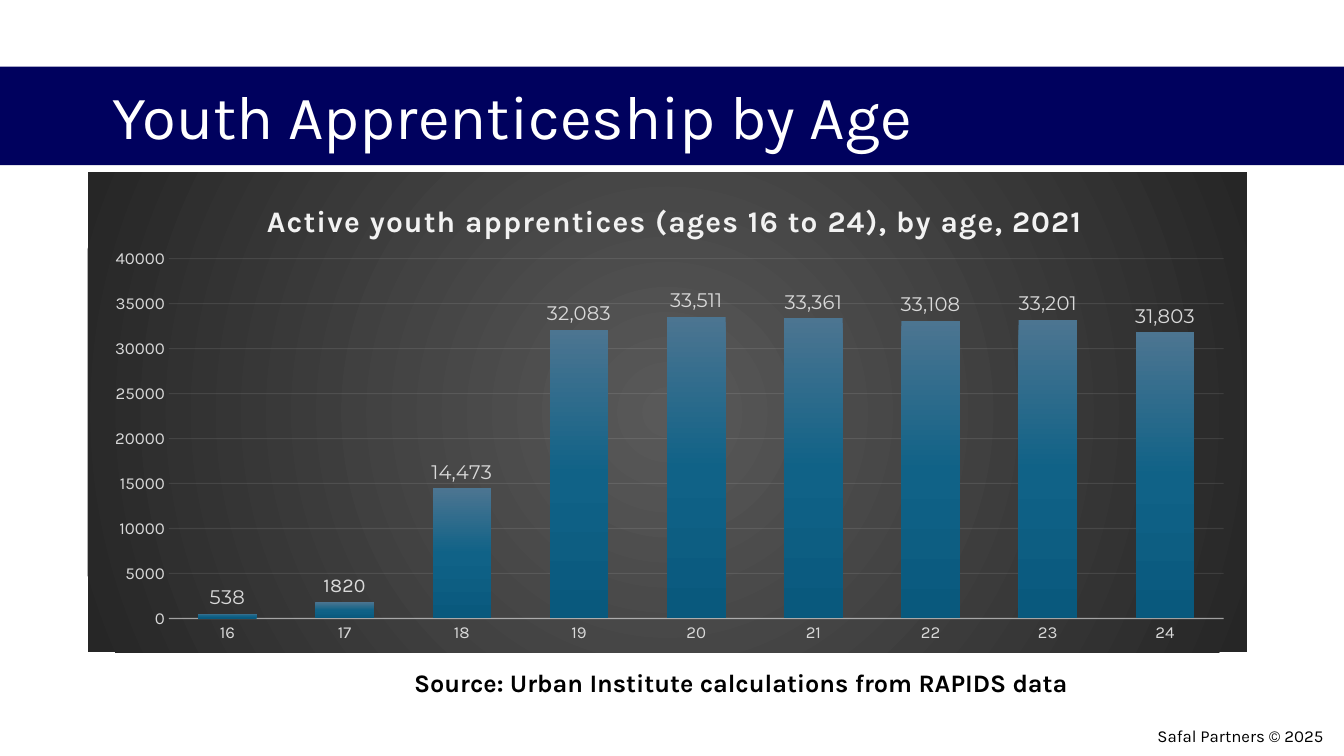
from lxml.etree import fromstring
from pptx import Presentation
from pptx.chart.data import CategoryChartData
from pptx.dml.color import RGBColor
from pptx.enum.chart import XL_CHART_TYPE, XL_LABEL_POSITION, XL_TICK_MARK
from pptx.enum.shapes import MSO_SHAPE
from pptx.enum.text import MSO_ANCHOR, PP_ALIGN
from pptx.oxml.ns import nsdecls, qn
from pptx.util import Inches, Pt

COLUMNS, ROWS = 160, 90
SLIDE_WIDTH, SLIDE_HEIGHT = Inches(13.33), Inches(7.5)
APPRENTICES_BY_AGE = {
    "16": 538, "17": 1820, "18": 14473, "19": 32083, "20": 33511,
    "21": 33361, "22": 33108, "23": 33201, "24": 31803,
}


def grid(column, row, columns, rows):
    """Turn grid units into left, top, width and height."""
    return (
        int(SLIDE_WIDTH * column / COLUMNS), int(SLIDE_HEIGHT * row / ROWS),
        int(SLIDE_WIDTH * columns / COLUMNS), int(SLIDE_HEIGHT * rows / ROWS),
    )


def color(hex_text):
    """Return the colour of a hex string."""
    return RGBColor.from_string(hex_text)


def format_font(font, size, hex_text, name="Karla", bold=False):
    """Set the look of a font."""
    font.name, font.size, font.bold = name, Pt(size), bold
    font.color.rgb = color(hex_text)


def write_text(frame, text, size=12, hex_text="000000", bold=False,
               align=PP_ALIGN.LEFT, anchor=MSO_ANCHOR.TOP, line_spacing=1.0):
    """Write one formatted paragraph in a text frame and return its run."""
    frame.word_wrap = True
    frame.vertical_anchor = anchor
    paragraph = frame.paragraphs[0]
    paragraph.alignment, paragraph.line_spacing = align, line_spacing
    run = paragraph.add_run()
    run.text = text
    format_font(run.font, size, hex_text, bold=bold)
    return run


def add_band(slide, place, fill):
    """Add a plain filled rectangle."""
    band = slide.shapes.add_shape(MSO_SHAPE.RECTANGLE, *place)
    band.shadow.inherit = False
    band.fill.solid()
    band.fill.fore_color.rgb = color(fill)
    band.line.fill.background()


def add_text(slide, place, text, **text_format):
    """Add a text box."""
    write_text(slide.shapes.add_textbox(*place).text_frame, text, **text_format)


def set_title(slide, place, text, **text_format):
    """Move the title placeholder and fill it."""
    title = slide.shapes.title
    title.left, title.top, title.width, title.height = place
    write_text(title.text_frame, text, **text_format)


def gradient(stops, direction):
    """Build a gradient fill from percentages and hex colours."""
    stop_xml = "".join(
        f'<a:gs pos="{percent * 1000}"><a:srgbClr val="{value}"/></a:gs>'
        for percent, value in stops
    )
    return fromstring(
        f'<a:gradFill {nsdecls("a")} rotWithShape="1">'
        f"<a:gsLst>{stop_xml}</a:gsLst>{direction}</a:gradFill>"
    )


def manual_layout(**settings):
    """Build a manual chart layout from its settings."""
    parts = "".join(f'<c:{key} val="{value}"/>' for key, value in settings.items())
    return fromstring(
        f'<c:layout {nsdecls("c")}><c:manualLayout>{parts}</c:manualLayout></c:layout>'
    )


def replace_layout(parent, layout, index):
    """Swap the layout of a chart part."""
    for old_layout in parent.findall(qn("c:layout")):
        parent.remove(old_layout)
    parent.insert(index, layout)


def format_line(line, width, hex_text, opacity):
    """Give a line its width, colour and opacity percentage."""
    line.width = Pt(width)
    line.color.rgb = color(hex_text)
    rgb = line._get_or_add_ln().find(".//" + qn("a:srgbClr"))
    rgb.append(fromstring(f'<a:alpha {nsdecls("a")} val="{opacity * 1000}"/>'))


def format_axes(chart):
    """Format both axes and the gridlines."""
    for axis in (chart.category_axis, chart.value_axis):
        axis.major_tick_mark = axis.minor_tick_mark = XL_TICK_MARK.NONE
        format_font(axis.tick_labels.font, 12, "D9D9D9")
    format_line(chart.category_axis.format.line, 1, "F2F2F2", 54)
    values = chart.value_axis
    values.minimum_scale, values.maximum_scale, values.major_unit = 0, 40000, 5000
    values.tick_labels.number_format = "0"
    values.tick_labels.number_format_is_linked = False
    values.format.line.fill.background()
    values.has_major_gridlines = True
    format_line(values.major_gridlines.format.line, 0.75, "F2F2F2", 10)


def format_columns(plot):
    """Format the columns and their labels."""
    plot.vary_by_categories = False
    plot.gap_width, plot.overlap = 100, -24
    series = plot.series[0]
    series._element.get_or_add_spPr().append(gradient(
        [(0, "4C7591"), (50, "106287"), (100, "09597D")],
        '<a:lin ang="5400000" scaled="0"/>',
    ))
    labels = series.data_labels
    labels.show_value = True
    labels.number_format, labels.number_format_is_linked = "#,##0", False
    labels.position = XL_LABEL_POSITION.OUTSIDE_END
    format_font(labels.font, 14, "D9D9D9", name="Montserrat")
    age_17 = series.points[1].data_label
    write_text(age_17.text_frame, "1820", size=14, hex_text="D9D9D9",
               align=PP_ALIGN.CENTER)
    age_17.position = XL_LABEL_POSITION.OUTSIDE_END


def add_column_chart(slide, place, heading, values):
    """Add the column chart on its dark panel."""
    data = CategoryChartData(number_format="#,##0")
    data.categories = list(values)
    data.add_series("Series 1", list(values.values()))
    chart = slide.shapes.add_chart(XL_CHART_TYPE.COLUMN_CLUSTERED, *place, data).chart
    format_font(chart.font, 10, "000000")
    chart.has_legend = False
    chart.has_title = True
    run = write_text(chart.chart_title.text_frame, heading, size=21.3,
                     hex_text="F2F2F2", bold=True, align=PP_ALIGN.CENTER)
    run.font._element.set("spc", "100")
    chart.chart_title.include_in_layout = False
    replace_layout(chart.chart_title._element,
                   manual_layout(xMode="edge", yMode="edge", x=0.15, y=0.05), 1)
    format_axes(chart)
    format_columns(chart.plots[0])
    chart_space = chart._chartSpace
    replace_layout(
        chart_space.find(".//" + qn("c:plotArea")),
        manual_layout(layoutTarget="inner", xMode="edge", yMode="edge",
                      x=0.07, y=0.18, w=0.91, h=0.75), 0)
    panel = fromstring(f'<c:spPr {nsdecls("c", "a")}><a:ln><a:noFill/></a:ln></c:spPr>')
    panel.insert(0, gradient(
        [(0, "595959"), (100, "262626")],
        '<a:path path="circle">'
        '<a:fillToRect l="50000" t="50000" r="50000" b="50000"/></a:path>',
    ))
    chart_space.find(qn("c:chart")).addnext(panel)


def main():
    """Build and save the slide."""
    presentation = Presentation()
    presentation.slide_width, presentation.slide_height = SLIDE_WIDTH, SLIDE_HEIGHT
    slide = presentation.slides.add_slide(presentation.slide_layouts[5])
    add_band(slide, grid(0, 7.92, COLUMNS, 11.76), "00015E")
    title = slide.shapes.title._element
    title.getparent().append(title)
    set_title(slide, grid(12.24, 5.52, 147.76, 17.4), "Youth Apprenticeship by Age",
              size=44, hex_text="FFFFFF", anchor=MSO_ANCHOR.MIDDLE, line_spacing=0.9)
    add_column_chart(slide, grid(10.44, 20.52, 138, 57.12),
                     "Active youth apprentices (ages 16 to 24), by age, 2021",
                     APPRENTICES_BY_AGE)
    add_text(slide, grid(48.12, 79.32, 88.44, 4.8),
             "Source: Urban Institute calculations from RAPIDS data",
             size=18, bold=True, line_spacing=0.9)
    add_text(slide, grid(115.2, 85.2, 43.56, 4.8), "Safal Partners © 2025",
             align=PP_ALIGN.RIGHT, anchor=MSO_ANCHOR.MIDDLE)
    presentation.save("out.pptx")


if __name__ == "__main__":
    main()
